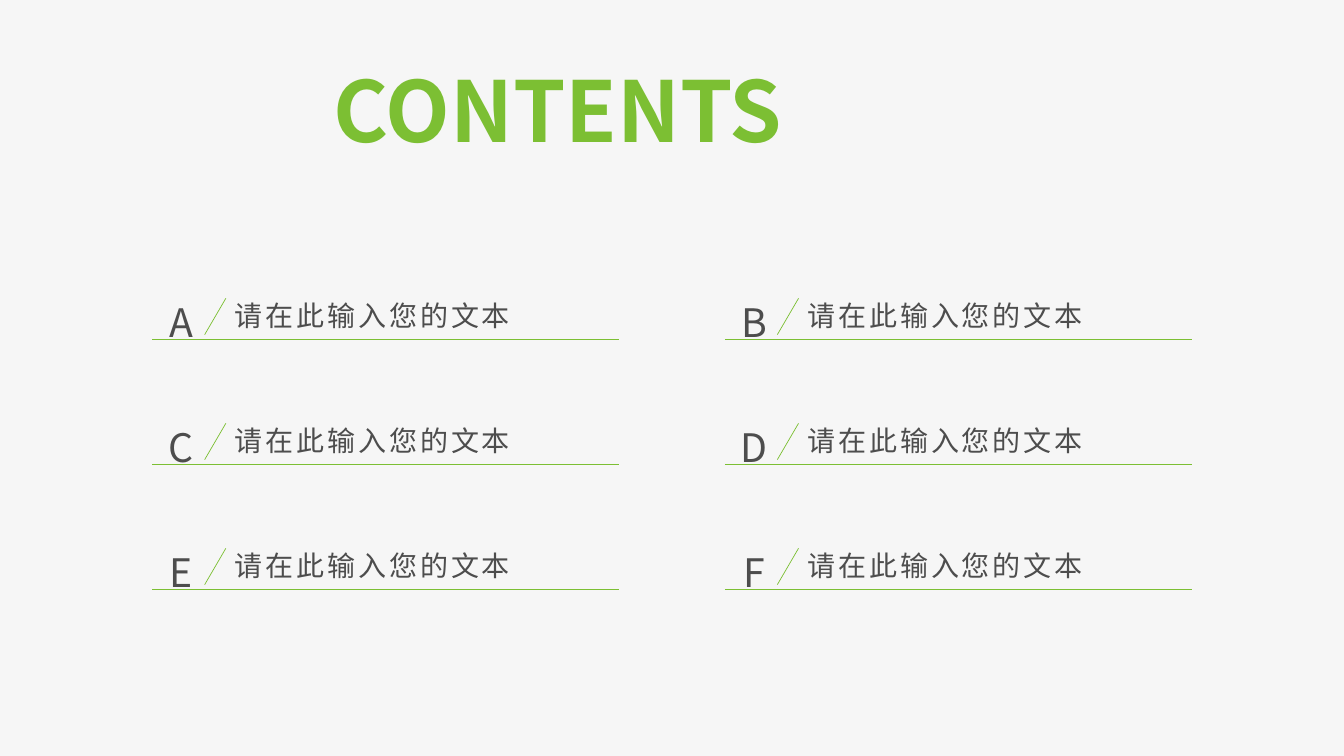
from lxml import etree
from pptx import Presentation
from pptx import util as u
from pptx.dml.color import RGBColor
from pptx.enum import shapes, text
from pptx.oxml import ns

PX = 9144  # 100 px to the inch
FONT = "Noto Sans CJK SC"
GREEN = RGBColor(0x7C, 0xBF, 0x33)
GREY = RGBColor(0x4D, 0x4D, 0x4D)
BACKGROUND = RGBColor(0xF6, 0xF6, 0xF6)

ENTRIES = [(letter, "请在此输入您的文本") for letter in "ABCDEF"]
COLUMNS = 2
GRID_LEFT, GRID_TOP = 151, 284
COLUMN_STEP, ROW_STEP = 568, 124


def px(*lengths):
    return [u.Emu(length * PX) for length in lengths]


def add_line(slide, x1, y1, x2, y2):
    line = slide.shapes.add_connector(
        shapes.MSO_CONNECTOR.STRAIGHT, *px(x1, y1, x2, y2))
    line.line.color.rgb = GREEN
    line.line.width = u.Pt(0.5)
    etree.SubElement(line.element.spPr, ns.qn("a:effectLst"))


def add_text(slide, box, words, size, color, align, anchor, margins,
             bold=False, tracking=0, line_spacing=None):
    """Add one line of text; margins run left, top, right, bottom in px."""
    shape = slide.shapes.add_textbox(*px(*box))
    frame = shape.text_frame
    frame.word_wrap = True
    frame.vertical_anchor = anchor
    (frame.margin_left, frame.margin_top,
     frame.margin_right, frame.margin_bottom) = px(*margins)
    paragraph = frame.paragraphs[0]
    paragraph.alignment = align
    paragraph.line_spacing = line_spacing
    run = paragraph.add_run()
    run.text = words
    run.font.size = u.Pt(size)
    run.font.bold = bold
    run.font.color.rgb = color
    run.font.name = FONT
    properties = run.font._element
    etree.SubElement(properties, ns.qn("a:ea"), typeface=FONT)
    if tracking:
        properties.set("spc", str(tracking * 100))
    return shape


def add_title(slide, words):
    title = add_text(slide, (321, 53, 691, 111), words, 60, GREEN,
                     text.PP_ALIGN.JUSTIFY, text.MSO_ANCHOR.TOP,
                     (10, 5, 10, 5), bold=True)
    title.text_frame.auto_size = text.MSO_AUTO_SIZE.SHAPE_TO_FIT_TEXT


def add_entry(slide, left, top, letter, label):
    add_line(slide, left, top + 53, left + 463, top + 53)
    add_text(slide, (left + 74, top + 4, 389, 49), label, 20, GREY,
             text.PP_ALIGN.LEFT, text.MSO_ANCHOR.MIDDLE, (8, 0, 0, 0),
             tracking=2)
    add_line(slide, left + 73, top + 12, left + 52, top + 48)
    add_text(slide, (left, top, 58, 59), letter, 28, GREY,
             text.PP_ALIGN.CENTER, text.MSO_ANCHOR.BOTTOM, (0, 0, 0, 0),
             line_spacing=1.3)


def main():
    presentation = Presentation()
    presentation.slide_width, presentation.slide_height = px(1333, 750)
    slide = presentation.slides.add_slide(presentation.slide_layouts[6])
    slide.background.fill.solid()
    slide.background.fill.fore_color.rgb = BACKGROUND

    add_title(slide, "CONTENTS")
    for index, (letter, label) in enumerate(ENTRIES):
        row, column = divmod(index, COLUMNS)
        add_entry(slide, GRID_LEFT + column * COLUMN_STEP,
                  GRID_TOP + row * ROW_STEP, letter, label)

    presentation.save("out.pptx")


if __name__ == "__main__":
    main()
